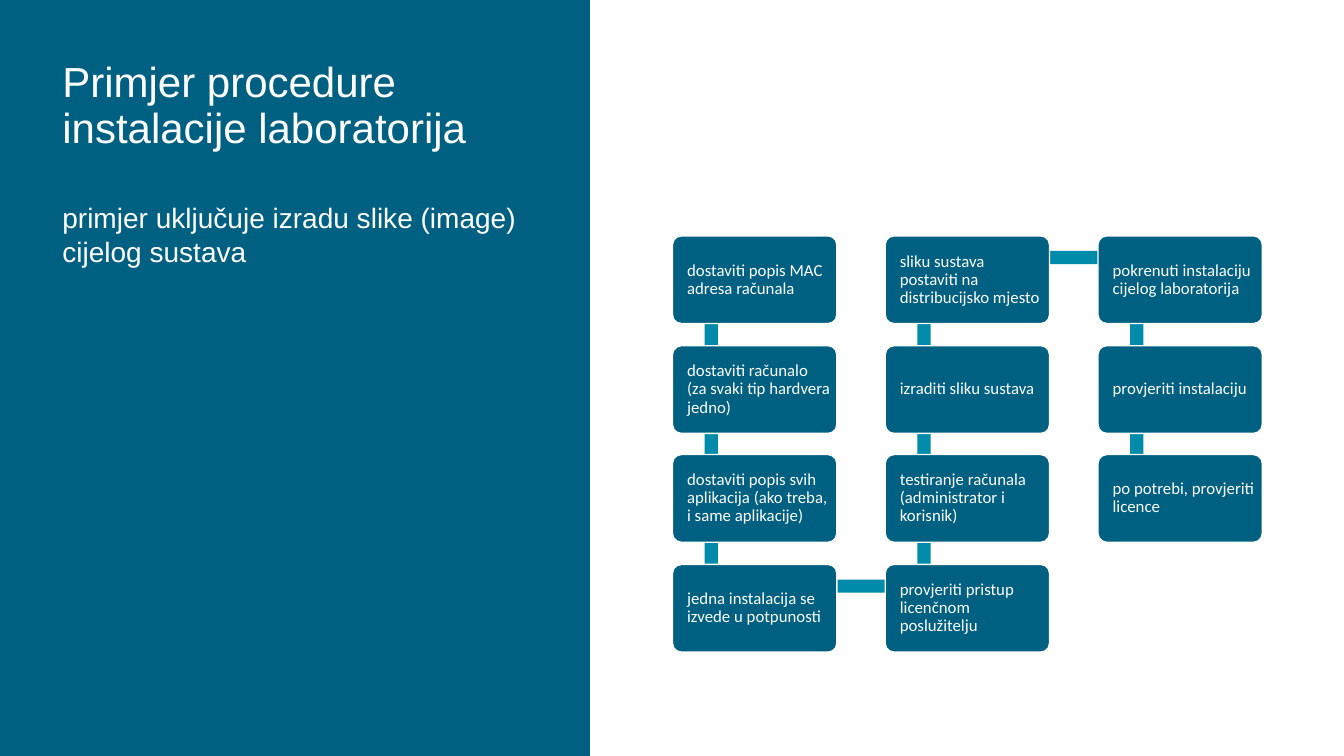
from pptx import Presentation
from pptx.dml.color import RGBColor
from pptx.enum.shapes import MSO_SHAPE as Preset
from pptx.enum.text import MSO_ANCHOR as Anchor, PP_ALIGN as Align
from pptx.util import Pt

PX = 9144

PETROL = RGBColor(0x00, 0x60, 0x81)
TEAL = RGBColor(0x00, 0x8B, 0xAA)
OFF_WHITE = RGBColor(0xFE, 0xFF, 0xFE)
WHITE = RGBColor(0xFF, 0xFF, 0xFF)

GRID_LEFT, GRID_TOP = 667, 234
COLUMN_PITCH = 211
THREE_ROWS = 326
STEP_WIDTH, STEP_HEIGHT = 163, 87
LINK_THICKNESS = 13

STEP_COLUMNS = [
    [
        "dostaviti popis MAC adresa računala",
        "dostaviti računalo (za svaki tip hardvera jedno)",
        "dostaviti popis svih aplikacija (ako treba, i same aplikacije)",
        "jedna instalacija se izvede u potpunosti",
    ],
    [
        "sliku sustava postaviti na distribucijsko mjesto",
        "izraditi sliku sustava",
        "testiranje računala (administrator i korisnik)",
        "provjeriti pristup licenčnom poslužitelju",
    ],
    [
        "pokrenuti instalaciju cijelog laboratorija",
        "provjeriti instalaciju",
        "po potrebi, provjeriti licence",
    ],
]
COLUMN_CROSSINGS = [(0, 3), (1, 0)]


def scaled(*lengths):
    return [length * PX for length in lengths]


def step_position(column, row):
    return GRID_LEFT + column * COLUMN_PITCH, GRID_TOP + round(row * THREE_ROWS / 3)


def write_text(shape, text, font_name, size, color, insets, anchor, spacing):
    frame = shape.text_frame
    frame.word_wrap = True
    frame.vertical_anchor = anchor
    (frame.margin_left, frame.margin_top,
     frame.margin_right, frame.margin_bottom) = scaled(*insets)
    frame.text = text
    paragraph = frame.paragraphs[0]
    paragraph.alignment = Align.LEFT
    paragraph.line_spacing = spacing
    font = paragraph.runs[0].font
    font.name = font_name
    font.size = Pt(size)
    font.color.rgb = color


def add_block(slide, preset, left, top, width, height, color):
    shape = slide.shapes.add_shape(preset, *scaled(left, top, width, height))
    shape.shadow.inherit = False
    shape.fill.solid()
    shape.fill.fore_color.rgb = color
    shape.line.fill.background()
    return shape


def add_heading(slide, top, height, text, size, color, anchor, spacing):
    box = slide.shapes.add_textbox(*scaled(52, top, 478, height))
    write_text(box, text, "Arial", size, color, (10, 5, 10, 5), anchor, spacing)


def add_down_link(slide, column, row):
    left, top = step_position(column, row)
    add_block(slide, Preset.RECTANGLE, left + 32, top + 22, LINK_THICKNESS, 108, TEAL)


def add_cross_link(slide, column, row):
    left, top = step_position(column, row)
    add_block(slide, Preset.RECTANGLE, left + 39, top + 15, 210, LINK_THICKNESS, TEAL)


def add_step(slide, column, row, text):
    left, top = step_position(column, row)
    step = add_block(slide, Preset.ROUNDED_RECTANGLE, left, top,
                     STEP_WIDTH, STEP_HEIGHT, PETROL)
    step.adjustments[0] = 0.1
    step.line.color.rgb = OFF_WHITE
    step.line.width = Pt(1)
    write_text(step, text, "Calibri", 12, OFF_WHITE, (12, 4, 4, 4), Anchor.MIDDLE, 0.9)


def main():
    presentation = Presentation()
    presentation.slide_width, presentation.slide_height = scaled(1333, 750)
    slide = presentation.slides.add_slide(presentation.slide_layouts[6])
    slide.background.fill.solid()
    slide.background.fill.fore_color.rgb = OFF_WHITE

    add_block(slide, Preset.RECTANGLE, 0, 0, 585, 750, PETROL)
    add_heading(slide, 52, 104, "Primjer procedure instalacije laboratorija",
                30, OFF_WHITE, Anchor.BOTTOM, 0.9)
    add_heading(slide, 194, 505, "primjer uključuje izradu slike (image) cijelog sustava",
                20, WHITE, Anchor.TOP, 1.0)

    for column, steps in enumerate(STEP_COLUMNS):
        for row in range(len(steps) - 1):
            add_down_link(slide, column, row)
    for column, row in COLUMN_CROSSINGS:
        add_cross_link(slide, column, row)
    for column, steps in enumerate(STEP_COLUMNS):
        for row, text in enumerate(steps):
            add_step(slide, column, row, text)

    presentation.save("out.pptx")


if __name__ == "__main__":
    main()
